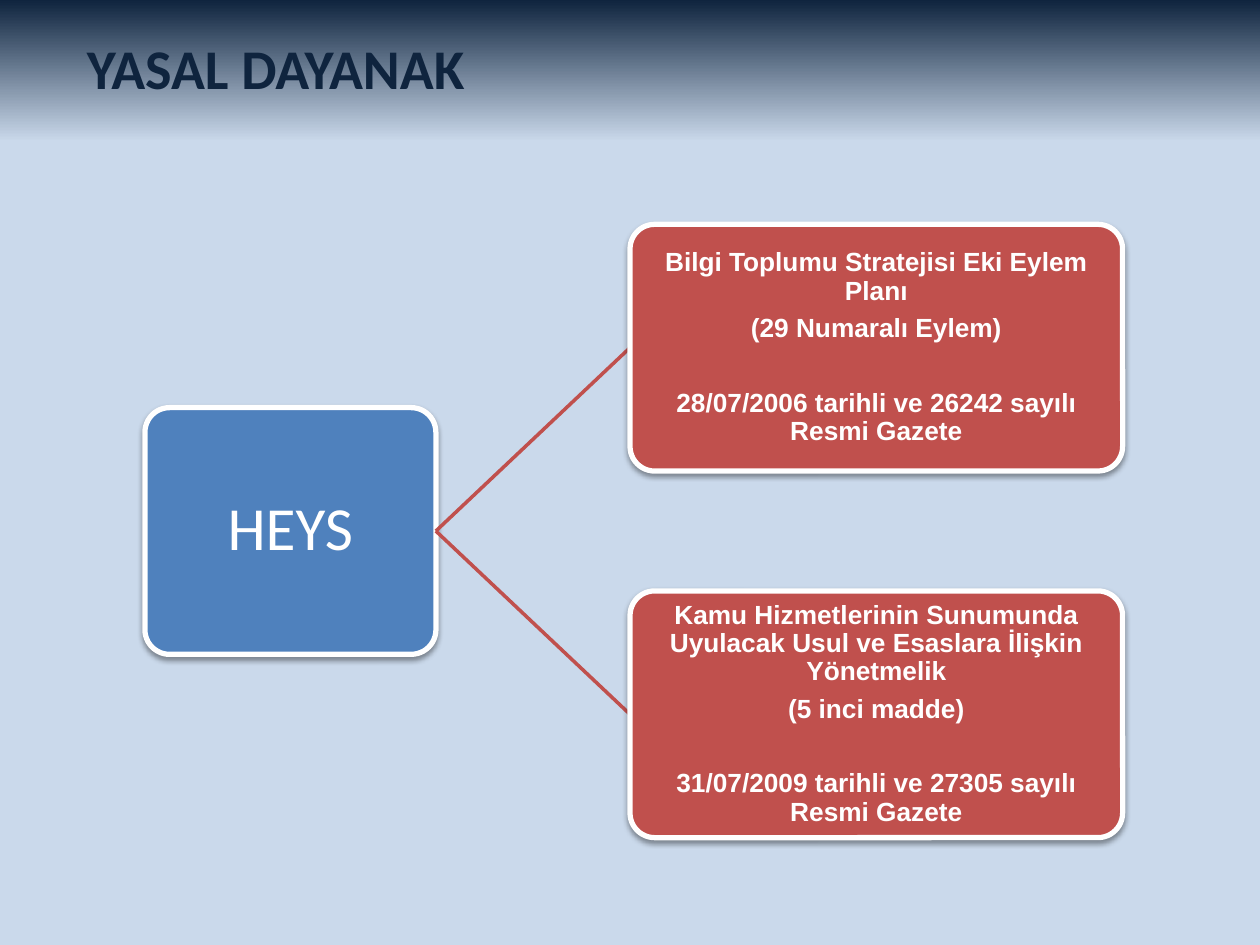
from lxml.etree import SubElement
from pptx import Presentation
from pptx.dml.color import RGBColor
from pptx.enum.shapes import MSO_CONNECTOR as Connector, MSO_SHAPE as Shape
from pptx.enum.text import MSO_ANCHOR as Anchor, MSO_AUTO_SIZE as AutoSize, PP_ALIGN as Align
from pptx.oxml.ns import qn
from pptx.util import Pt

NAVY = RGBColor(0x0F, 0x24, 0x3E)
PALE_BLUE = RGBColor(0xCA, 0xD9, 0xEB)
BLUE = RGBColor(0x4F, 0x81, 0xBD)
RED = RGBColor(0xC0, 0x50, 0x4D)
WHITE = RGBColor(0xFF, 0xFF, 0xFF)

# Layout of the tree, in points
NODE_HEIGHT = 141
ROOT_LEFT, ROOT_WIDTH = 82.8, 166.3
BRANCH_LEFT, BRANCH_WIDTH = 360, 281.5
BRANCH_TOP, BRANCH_PITCH = 128.2, 209.5

ROOT_FORMAT = {"name": "Calibri", "size": Pt(35), "bold": False}
BRANCH_FORMAT = {"name": "Arial", "size": Pt(15), "bold": True}
TITLE_FORMAT = {"name": "Calibri", "size": Pt(32), "bold": True}

# Each branch: legal text, article, official gazette
BRANCHES = [
    ["Bilgi Toplumu Stratejisi Eki Eylem Planı",
     "(29 Numaralı Eylem)",
     "28/07/2006 tarihli ve 26242 sayılı Resmi Gazete"],
    ["Kamu Hizmetlerinin Sunumunda Uyulacak Usul ve Esaslara İlişkin Yönetmelik",
     "(5 inci madde)",
     "31/07/2009 tarihli ve 27305 sayılı Resmi Gazete"],
]


def set_values(target, values):
    for name, value in values.items():
        setattr(target, name, value)


def set_font(paragraph, values, color):
    set_values(paragraph.font, values)
    paragraph.font.color.rgb = color


def set_background(slide):
    fill = slide.background.fill
    fill.gradient()
    fill.gradient_angle = 270
    for stop, color, position in zip(fill.gradient_stops, (NAVY, PALE_BLUE), (0, 0.15)):
        stop.color.rgb = color
        stop.position = position


def add_title(slide, text):
    title = slide.shapes.title
    set_values(title, {"left": Pt(42.5), "top": Pt(15.8),
                       "width": Pt(363), "height": Pt(46)})
    frame = title.text_frame
    set_values(frame, {"text": text, "vertical_anchor": Anchor.TOP,
                       "word_wrap": True, "auto_size": AutoSize.NONE})
    paragraph = frame.paragraphs[0]
    paragraph.alignment = Align.LEFT
    set_font(paragraph, TITLE_FORMAT, NAVY)


def add_soft_shadow(shape):
    shape.shadow.inherit = False
    effects = shape._element.spPr.find(qn("a:effectLst"))
    shadow = SubElement(effects, qn("a:outerShdw"), blurRad=str(Pt(3.1)),
                        dist=str(Pt(1.6)), dir="5400000", rotWithShape="0")
    color = SubElement(shadow, qn("a:srgbClr"), val="000000")
    SubElement(color, qn("a:alpha"), val="38000")


def add_node(slide, left, top, width, color, lines, font_values):
    node = slide.shapes.add_shape(Shape.ROUNDED_RECTANGLE, Pt(left), Pt(top),
                                  Pt(width), Pt(NODE_HEIGHT))
    node.adjustments[0] = 0.1
    node.fill.solid()
    node.fill.fore_color.rgb = color
    node.line.color.rgb = WHITE
    node.line.width = Pt(3)
    add_soft_shadow(node)

    frame = node.text_frame
    set_values(frame, {"word_wrap": True, "vertical_anchor": Anchor.MIDDLE,
                       "margin_left": Pt(1), "margin_right": Pt(1),
                       "margin_top": Pt(1), "margin_bottom": Pt(1)})
    frame.text = "\n".join(lines)
    for paragraph in frame.paragraphs:
        set_values(paragraph, {"alignment": Align.CENTER, "line_spacing": 0.9,
                               "space_after": font_values["size"] * 35 // 100})
        set_font(paragraph, font_values, WHITE)
    # The gazette line stands apart from the lines above it
    if len(lines) > 1:
        frame.paragraphs[-1].space_before = Pt(21)


def add_link(slide, start, end):
    link = slide.shapes.add_connector(Connector.STRAIGHT, *map(Pt, start + end))
    link.line.color.rgb = RED
    link.line.width = Pt(2)
    SubElement(link._element.spPr, qn("a:effectLst"))


def main():
    presentation = Presentation()
    presentation.slide_width, presentation.slide_height = Pt(720), Pt(540)
    slide = presentation.slides.add_slide(presentation.slide_layouts[5])
    set_background(slide)
    add_title(slide, "YASAL DAYANAK")

    # Root, centred on the column of branches
    root_top = BRANCH_TOP + BRANCH_PITCH * (len(BRANCHES) - 1) / 2
    add_node(slide, ROOT_LEFT, root_top, ROOT_WIDTH, BLUE, ["HEYS"], ROOT_FORMAT)
    root_edge = (ROOT_LEFT + ROOT_WIDTH, root_top + NODE_HEIGHT / 2)

    # Branches with their links
    for index, lines in enumerate(BRANCHES):
        top = BRANCH_TOP + index * BRANCH_PITCH
        add_link(slide, root_edge, (BRANCH_LEFT, top + NODE_HEIGHT / 2))
        add_node(slide, BRANCH_LEFT, top, BRANCH_WIDTH, RED, lines, BRANCH_FORMAT)

    presentation.save("out.pptx")


if __name__ == "__main__":
    main()
